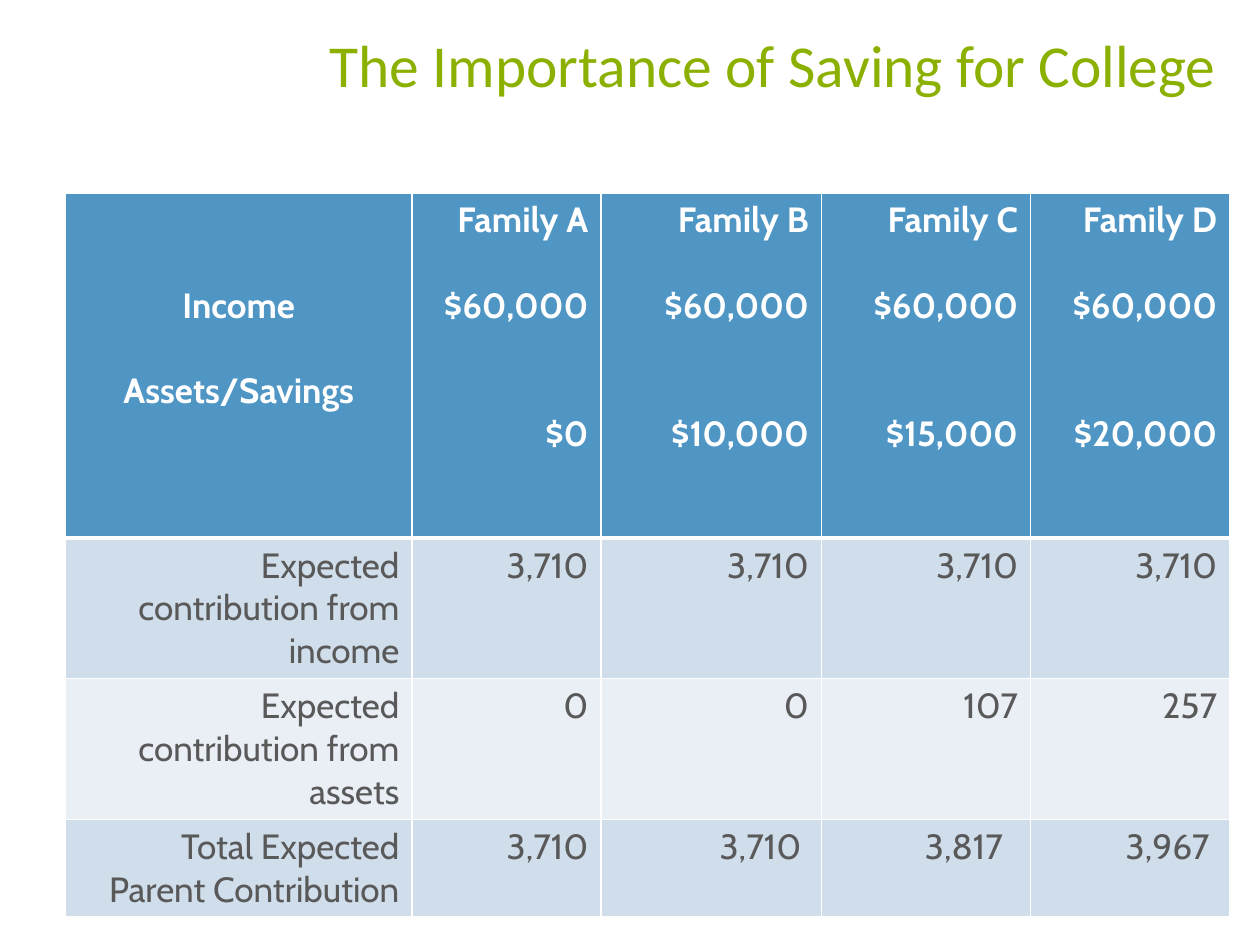
import pptx
import pptx.util
import pptx.dml.color
import pptx.enum.text
import pptx.oxml
import pptx.oxml.ns

Inches = pptx.util.Inches
Pt = pptx.util.Pt
ALIGN = pptx.enum.text.PP_ALIGN

WHITE, GREEN, BLUE, GREY = "FFFFFF", "8CB000", "5096C5", "595959"
BANDS = ["D0DDEA", "E9EFF5", "D0DDEA"]
LINE_GAP = 24.4

TITLE_FORMAT = {"name": "Calibri", "size": Pt(34), "bold": False}
HEADER_FORMAT = {"name": "Cabin", "size": Pt(20), "bold": True}
BODY_FORMAT = {"name": "Cabin", "size": Pt(20), "bold": False}

COLUMN_WIDTHS = [2.75, 1.5, 1.75, 1.66, 1.58]
ROW_HEIGHTS = [2.74, 0.95, 0.95, 0.77]
FAMILIES = [
    ("Family A", "$60,000", "$0"),
    ("Family B", "$60,000", "$10,000"),
    ("Family C", "$60,000", "$15,000"),
    ("Family D", "$60,000", "$20,000"),
]
CONTRIBUTIONS = [
    ("Expected contribution from income", "3,710", "3,710", "3,710", "3,710"),
    ("Expected contribution from assets", "0", "0", "107", "257"),
    ("Total Expected Parent Contribution", "3,710", "3,710", "3,817", "3,967"),
]
TOTAL_INSETS = [0.1, 0.1, 0.16, 0.22, 0.16]


def rgb(value):
    return pptx.dml.color.RGBColor.from_string(value)


def format_paragraph(paragraph, text, font_format, color, align):
    paragraph.alignment = align
    run = paragraph.add_run()
    run.text = text
    for attribute, value in font_format.items():
        setattr(run.font, attribute, value)
    run.font.color.rgb = rgb(color)


def add_title(slide, text):
    title = slide.shapes.title
    bounds = {"left": 0.5, "top": 0.17, "width": 9.25, "height": 1.05}
    for attribute, value in bounds.items():
        setattr(title, attribute, Inches(value))
    frame = title.text_frame
    frame.word_wrap = True
    frame.auto_size = pptx.enum.text.MSO_AUTO_SIZE.NONE
    frame.vertical_anchor = pptx.enum.text.MSO_ANCHOR.TOP
    format_paragraph(frame.paragraphs[0], text, TITLE_FORMAT, GREEN, ALIGN.RIGHT)


def set_borders(cell, bottom_width):
    properties = cell._tc.get_or_add_tcPr()
    widths = {"lnL": 1, "lnR": 1, "lnT": 1, "lnB": bottom_width}
    for position, (side, width) in enumerate(widths.items()):
        border = pptx.oxml.parse_xml(
            f'<a:{side} {pptx.oxml.ns.nsdecls("a")} w="{Pt(width)}">'
            f'<a:solidFill><a:srgbClr val="{WHITE}"/></a:solidFill></a:{side}>'
        )
        properties.insert(position, border)


def fill_cell(cell, lines, gaps, font_format, color, fill, align=ALIGN.RIGHT, bottom_width=1):
    cell.fill.solid()
    cell.fill.fore_color.rgb = rgb(fill)
    set_borders(cell, bottom_width)
    frame = cell.text_frame
    for index, (line, gap) in enumerate(zip(lines, gaps)):
        paragraph = frame.add_paragraph() if index else frame.paragraphs[0]
        if gap:
            paragraph.space_before = Pt(gap * LINE_GAP)
        format_paragraph(paragraph, line, font_format, color, align)


def fill_header(table):
    style = (HEADER_FORMAT, WHITE, BLUE)
    labels = table.cell(0, 0)
    fill_cell(labels, ("Income", "Assets/Savings"), (0, 1), *style,
              align=ALIGN.CENTER, bottom_width=3)
    labels.margin_top = Inches(0.73)
    for column, family in enumerate(FAMILIES, 1):
        fill_cell(table.cell(0, column), family, (0, 1, 2), *style, bottom_width=3)


def fill_body(table):
    for row, (values, band) in enumerate(zip(CONTRIBUTIONS, BANDS), 1):
        for column, value in enumerate(values):
            fill_cell(table.cell(row, column), [value], [0], BODY_FORMAT, GREY, band)
    for column, inset in enumerate(TOTAL_INSETS):
        table.cell(len(CONTRIBUTIONS), column).margin_right = Inches(inset)


def add_contribution_table(slide):
    table = slide.shapes.add_table(
        len(ROW_HEIGHTS), len(COLUMN_WIDTHS), Inches(0.52), Inches(1.53),
        Inches(sum(COLUMN_WIDTHS)), Inches(sum(ROW_HEIGHTS)),
    ).table
    for column, width in zip(table.columns, COLUMN_WIDTHS):
        column.width = Inches(width)
    for row, height in zip(table.rows, ROW_HEIGHTS):
        row.height = Inches(height)
    fill_header(table)
    fill_body(table)


def main():
    presentation = pptx.Presentation()
    presentation.slide_width = Inches(10)
    presentation.slide_height = Inches(7.5)
    slide = presentation.slides.add_slide(presentation.slide_layouts[5])
    add_title(slide, "The Importance of Saving for College")
    add_contribution_table(slide)
    presentation.save("out.pptx")


if __name__ == "__main__":
    main()
